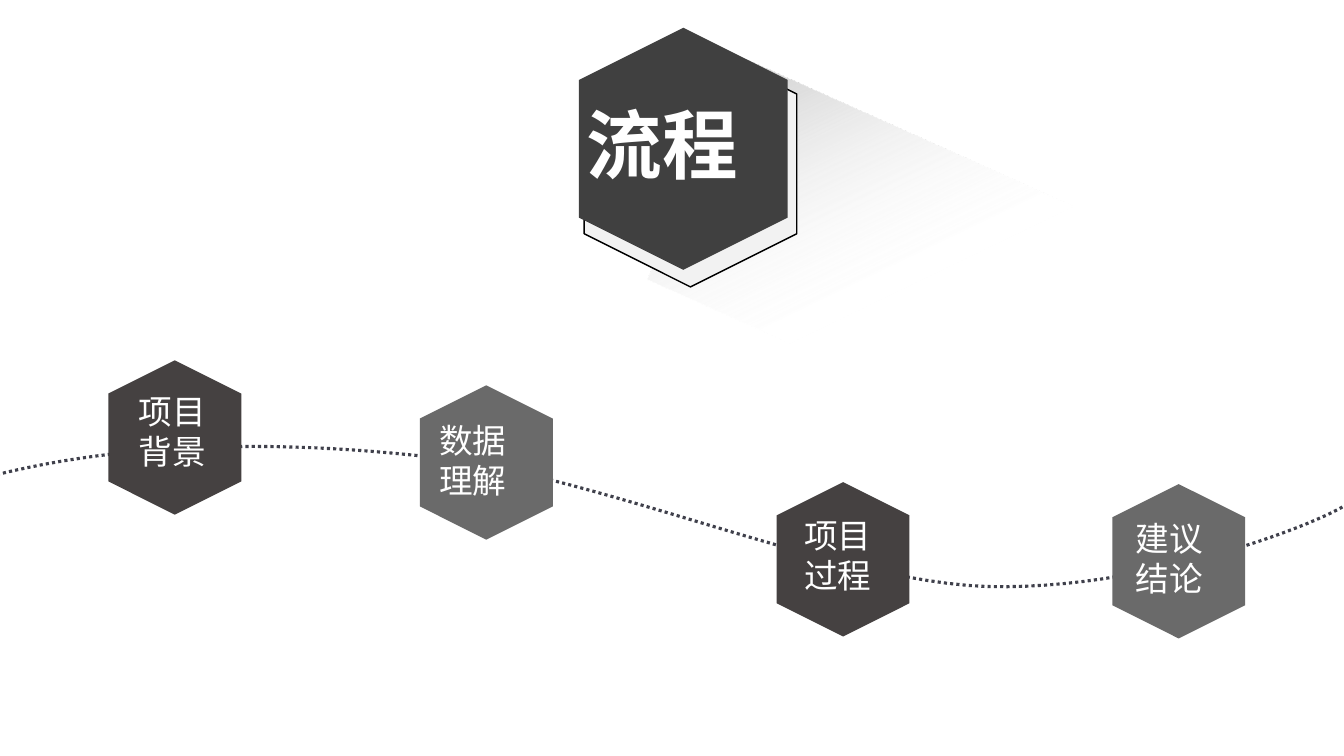
from pptx import Presentation
from pptx.dml.color import RGBColor
from pptx.enum.dml import MSO_LINE
from pptx.enum.shapes import MSO_SHAPE
from pptx.enum.text import MSO_ANCHOR, MSO_AUTO_SIZE, PP_ALIGN
from pptx.oxml import parse_xml
from pptx.oxml.ns import nsdecls, qn
from pptx.util import Cm, Pt

HEXAGON, RECT = MSO_SHAPE.HEXAGON, MSO_SHAPE.RECTANGLE
DOTTED = MSO_LINE.ROUND_DOT
LEFT, CENTER, JUSTIFY = PP_ALIGN.LEFT, PP_ALIGN.CENTER, PP_ALIGN.JUSTIFY
TOP, NO_FIT = MSO_ANCHOR.TOP, MSO_AUTO_SIZE.NONE

WHITE = RGBColor(0xFF, 0xFF, 0xFF)
BLACK = RGBColor(0x00, 0x00, 0x00)
PALE = RGBColor(0xF2, 0xF2, 0xF2)
CHARCOAL = RGBColor(0x40, 0x40, 0x40)
BROWN = RGBColor(0x45, 0x41, 0x41)
GREY = RGBColor(0x6A, 0x6A, 0x6A)
SLATE = RGBColor(0x3F, 0x40, 0x4B)

SHADOW_STOPS = [(0, "838383", 54), (0, "BFBFBF", 100), (54, "FFFFFF", 0)]
ROAD = [(-0.08, 11.96), (3.07, 11.18), (6.81, 11.05), (10.97, 11.53),
        (15.11, 11.99), (21.03, 14.66), (24.89, 14.78),
        (28.78, 14.88), (32.97, 13.31), (33.91, 12.73)]
NODE_W, NODE_H, LABEL_H = 3.89, 3.35, 2.31
STEPS = [
    ("数据理解", GREY, (10.31, 9.98), (10.82, 10.46), 3.0, LEFT),
    ("建议结论", GREY, (27.76, 12.47), (28.37, 12.93), 2.77, LEFT),
    ("项目背景", BROWN, (2.46, 9.35), (3.25, 9.73), 2.31, LEFT),
    ("项目过程", BROWN, (19.3, 12.42), (19.66, 12.85), 2.9, CENTER),
]


class Deck:
    """Holds the font and the current slide, and draws its elements."""

    def __init__(self, prs, font):
        self.font = font
        self.s = prs.slides.add_slide(prs.slide_layouts[5])

    def shape(self, kind, x, y, w, h, rotation):
        sp = self.s.shapes.add_shape(kind, Cm(x), Cm(y), Cm(w), Cm(h))
        sp.rotation = rotation
        sp.shadow.inherit = False
        sp.line.fill.background()
        return sp

    def hexagon(self, x, y, w, h, color, outline=None):
        sp = self.shape(HEXAGON, x, y, w, h, 90)
        sp.fill.solid()
        sp.fill.fore_color.rgb = color
        if outline is not None:
            sp.line.color.rgb = outline
            sp.line.width = Pt(1)

    def long_shadow(self, x, y, w, h, rotation, angle, stops):
        sp = self.shape(RECT, x, y, w, h, rotation)
        sp.fill.gradient()
        grad = sp._element.spPr.find(qn("a:gradFill"))
        gs = "".join(
            f'<a:gs pos="{pos * 1000}"><a:srgbClr val="{color}">'
            f'<a:alpha val="{alpha * 1000}"/></a:srgbClr></a:gs>'
            for pos, color, alpha in stops)
        grad.getparent().replace(grad, parse_xml(
            f'<a:gradFill {nsdecls("a")} rotWithShape="1"><a:gsLst>{gs}</a:gsLst>'
            f'<a:lin ang="{angle * 60000}" scaled="0"/></a:gradFill>'))

    def dotted_curve(self, knots, color, steps=24):
        points = []
        for i in range(0, len(knots) - 1, 3):
            for n in range(1, steps + 1):
                t = n / steps
                weights = ((1 - t) ** 3, 3 * t * (1 - t) ** 2,
                           3 * t ** 2 * (1 - t), t ** 3)
                points.append(tuple(
                    Cm(sum(k * p[axis] for k, p in zip(weights, knots[i:i + 4])))
                    for axis in (0, 1)))
        x, y = knots[0]
        builder = self.s.shapes.build_freeform(Cm(x), Cm(y))
        builder.add_line_segments(points, close=False)
        sp = builder.convert_to_shape()
        sp.shadow.inherit = False
        sp.fill.background()
        sp.line.color.rgb = color
        sp.line.width = Pt(2.25)
        sp.line.dash_style = DOTTED

    def set_text(self, sp, text, size, align, bold=False):
        tf = sp.text_frame
        tf.text = text
        tf.word_wrap = True
        tf.auto_size = NO_FIT
        tf.vertical_anchor = TOP
        p = tf.paragraphs[0]
        p.alignment = align
        r = p.runs[0]
        r.font.name = self.font
        r.font.size = Pt(size)
        r.font.bold = bold
        r.font.color.rgb = WHITE
        latin = r._r.rPr.find(qn("a:latin"))
        latin.addnext(parse_xml(
            f'<a:ea {nsdecls("a")} typeface="{self.font}"/>'))

    def label(self, text, x, y, w, h, align):
        sp = self.s.shapes.add_textbox(Cm(x), Cm(y), Cm(w), Cm(h))
        self.set_text(sp, text, 24, align)

    def title(self, text, x, y, w, h):
        sp = self.s.shapes.title
        sp.left, sp.top, sp.width, sp.height = Cm(x), Cm(y), Cm(w), Cm(h)
        self.set_text(sp, text, 54, JUSTIFY, bold=True)
        sp._element.getparent().append(sp._element)


def main():
    prs = Presentation()
    prs.slide_width, prs.slide_height = Cm(33.87), Cm(19.05)
    deck = Deck(prs, "Noto Sans CJK SC")
    deck.long_shadow(17.07, 3.58, 11.46, 6.07, 24.2, 40, SHADOW_STOPS)
    deck.dotted_curve(ROAD, SLATE)
    deck.hexagon(14.3, 1.45, 6.2, 5.36, PALE, BLACK)
    deck.hexagon(14.17, 1.12, 6.1, 5.26, CHARCOAL)
    deck.title("流程", 14.53, 2.34, 5.33, 2.57)
    for text, color, node, corner, width, align in STEPS:
        deck.hexagon(*node, NODE_W, NODE_H, color)
        deck.label(text, *corner, width, LABEL_H, align)
    prs.save("out.pptx")


if __name__ == "__main__":
    main()
